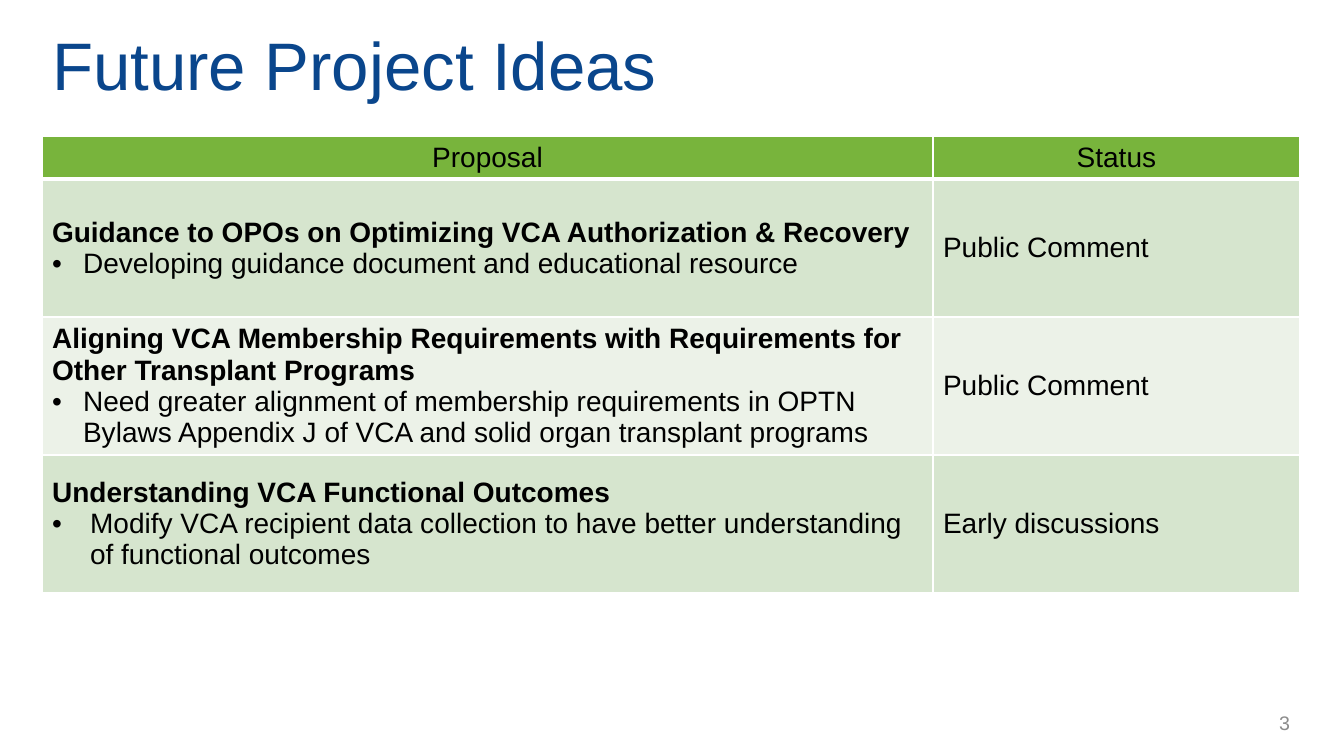
from lxml.etree import SubElement
from pptx import Presentation
from pptx.dml.color import RGBColor
from pptx.enum.text import MSO_ANCHOR, MSO_AUTO_SIZE, PP_ALIGN
from pptx.oxml.ns import qn
from pptx.util import Pt

PX = 12192000 / 1344  # EMU per px

HEADERS = ["Proposal", "Status"]
# heading, bullet, bullet indent in px, status
PROPOSALS = [
    ("Guidance to OPOs on Optimizing VCA Authorization & Recovery",
     "Developing guidance document and educational resource", 31, "Public Comment"),
    ("Aligning VCA Membership Requirements with Requirements for Other Transplant Programs",
     "Need greater alignment of membership requirements in OPTN Bylaws Appendix J "
     "of VCA and solid organ transplant programs", 31, "Public Comment"),
    ("Understanding VCA Functional Outcomes",
     "Modify VCA recipient data collection to have better understanding of functional outcomes",
     38, "Early discussions"),
]


def px(n):
    return round(n * PX)


def color(value):
    return RGBColor.from_string(value)


def write(p, text, size=20, fill="000000", bold=False, align=PP_ALIGN.LEFT, bullet=0):
    """Write one formatted paragraph; bullet is its hanging indent in px."""
    if bullet:
        pPr = p._p.get_or_add_pPr()
        pPr.set("marL", str(px(bullet)))
        pPr.set("indent", str(-px(bullet)))
        SubElement(pPr, qn("a:buFont"), typeface="Arial")
        SubElement(pPr, qn("a:buChar"), char="•")
    p.alignment = align
    r = p.add_run()
    r.text = text
    r.font.name, r.font.size, r.font.bold = "Arial", Pt(size), bold
    r.font.color.rgb = color(fill)


class Deck:
    title_color, number_color, line_color = "0A468C", "8C8C8C", "FFFFFF"
    header_fill, bands = "78B43C", ("D6E5CE", "ECF2E8")

    def __init__(self):
        self.prs = Presentation()
        self.prs.slide_width, self.prs.slide_height = px(1344), px(756)
        self.s = self.prs.slides.add_slide(self.prs.slide_layouts[5])

    def title(self, text, x, y, w, h):
        sp = self.s.shapes.title
        sp.left, sp.top, sp.width, sp.height = map(px, (x, y, w, h))
        tf = sp.text_frame
        tf.auto_size, tf.vertical_anchor = MSO_AUTO_SIZE.NONE, MSO_ANCHOR.MIDDLE
        write(tf.paragraphs[0], text, 48, self.title_color)

    def number(self, text, x, y, w, h):
        tf = self.s.shapes.add_textbox(*map(px, (x, y, w, h))).text_frame
        tf.word_wrap, tf.vertical_anchor = True, MSO_ANCHOR.MIDDLE
        write(tf.paragraphs[0], text, 14, self.number_color, align=PP_ALIGN.RIGHT)

    def cell(self, cell, fill, bottom=1):
        """Style a cell and return its text frame."""
        tcPr = cell._tc.get_or_add_tcPr()
        for side, width in zip("LRTB", (1, 1, 1, bottom)):
            ln = SubElement(tcPr, qn(f"a:ln{side}"), w=str(Pt(width)))
            SubElement(SubElement(ln, qn("a:solidFill")), qn("a:srgbClr"), val=self.line_color)
        cell.fill.solid()
        cell.fill.fore_color.rgb = color(fill)
        cell.vertical_anchor = MSO_ANCHOR.MIDDLE
        return cell.text_frame

    def table(self, x, y, widths, header_height, row_height):
        heights = [header_height] + [row_height] * len(PROPOSALS)
        table = self.s.shapes.add_table(
            len(heights), len(widths), *map(px, (x, y, sum(widths), sum(heights)))).table
        table.first_row = table.horz_banding = False
        for column, width in zip(table.columns, widths):
            column.width = px(width)
        for row, height in zip(table.rows, heights):
            row.height = px(height)
        # Header row
        for i, text in enumerate(HEADERS):
            tf = self.cell(table.cell(0, i), self.header_fill, bottom=3)
            write(tf.paragraphs[0], text, align=PP_ALIGN.CENTER)
        # Proposal rows
        for i, (heading, detail, indent, status) in enumerate(PROPOSALS):
            fill = self.bands[i % 2]
            tf = self.cell(table.cell(i + 1, 0), fill)
            write(tf.paragraphs[0], heading, bold=True)
            write(tf.add_paragraph(), detail, bullet=indent)
            tf = self.cell(table.cell(i + 1, 1), fill)
            write(tf.paragraphs[0], status)


def main():
    deck = Deck()
    deck.table(42, 136, (891, 367), 43, 138)
    deck.title("Future Project Ideas", 42, 17, 1284, 94)
    deck.number("3", 1072, 703, 228, 40)
    deck.prs.save("out.pptx")


if __name__ == "__main__":
    main()
